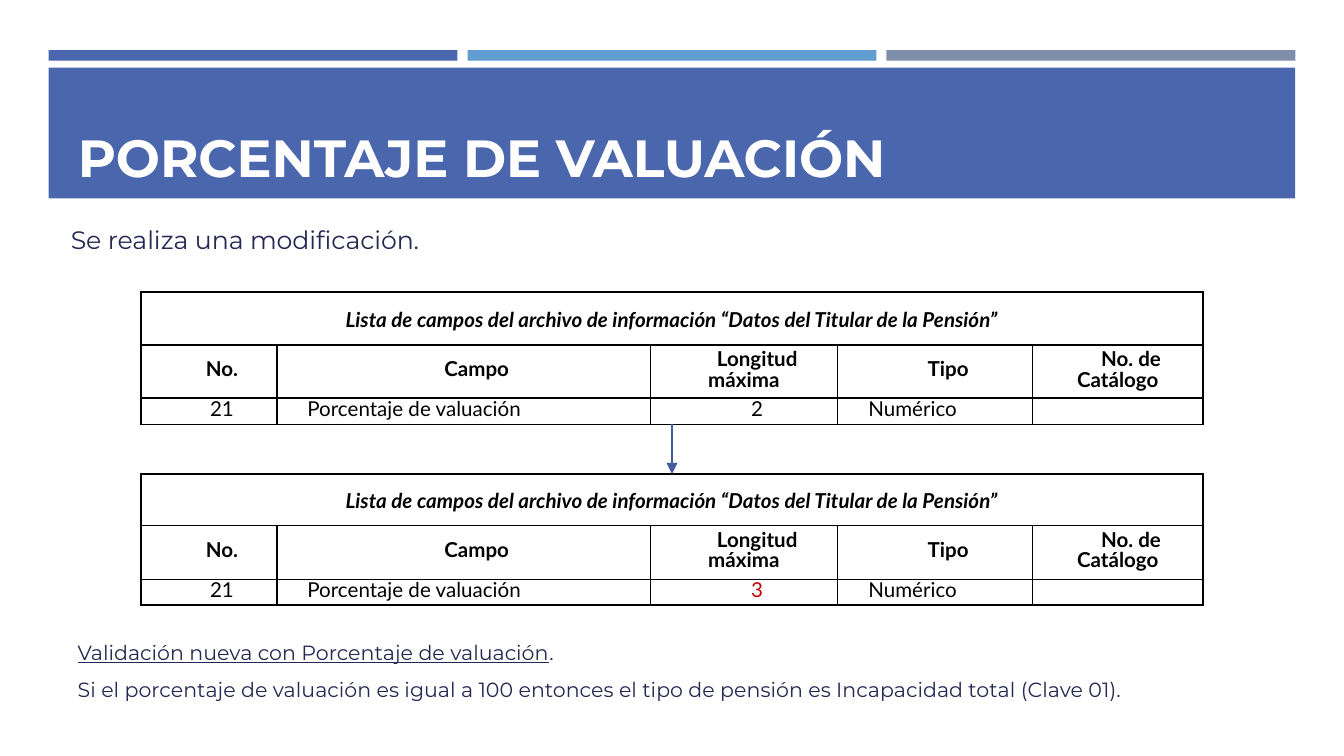
from dataclasses import dataclass

from lxml import etree
from pptx import Presentation
from pptx.dml.color import RGBColor
from pptx.enum.shapes import MSO_CONNECTOR, MSO_SHAPE
from pptx.enum.text import MSO_ANCHOR, MSO_AUTO_SIZE, PP_ALIGN
from pptx.oxml.ns import qn
from pptx.util import Cm, Pt

RECTANGLE = MSO_SHAPE.RECTANGLE
STRAIGHT = MSO_CONNECTOR.STRAIGHT
TOP, MIDDLE = MSO_ANCHOR.TOP, MSO_ANCHOR.MIDDLE
LEFT, CENTER, JUSTIFY = PP_ALIGN.LEFT, PP_ALIGN.CENTER, PP_ALIGN.JUSTIFY
NO_FIT = MSO_AUTO_SIZE.NONE
TITLE_ONLY = 5


@dataclass(frozen=True)
class Theme:
    band: str = "4A66AC"
    bars: tuple = ("4A66AC", "629DD1", "7F8FA9")
    arrow: str = "435C9B"
    heading: str = "FFFFFF"
    body: str = "242852"
    grid: str = "000000"
    changed: str = "C00000"
    body_font: str = "Montserrat"
    table_font: str = "Lato"
    title_size: float = 28
    lead_size: float = 13.5
    small_size: float = 11


THEME = Theme()
COLUMNS = (2.57, 7.06, 3.54, 3.68, 3.23)
CAPTION = "Lista de campos del archivo de información “Datos del Titular de la Pensión”"
HEADERS = ("No.", "Campo", "Longitud máxima", "Tipo", "No. de Catálogo")


def add_span(para, text, *, font, size, color, bold=False, italic=False, underline=False):
    span = para.add_run()
    span.text = text
    span.font.name = font
    span.font.size = Pt(size)
    span.font.color.rgb = RGBColor.from_string(color)
    span.font.bold = bold
    span.font.italic = italic
    span.font.underline = underline


def add_bar(page, box, color):
    bar = page.shapes.add_shape(RECTANGLE, *map(Cm, box))
    bar.shadow.inherit = False
    bar.fill.solid()
    bar.fill.fore_color.rgb = RGBColor.from_string(color)
    bar.line.fill.background()


def set_frame(frame):
    frame.word_wrap = True
    frame.auto_size = NO_FIT
    frame.vertical_anchor = TOP
    frame.margin_left = frame.margin_right = Cm(0.25)
    frame.margin_top = frame.margin_bottom = Cm(0.25)


def add_header(page, box, text):
    left, top, width, height = box
    gap, bar_height = 0.19, 0.2
    bar_width = (width - 2 * gap) / 3
    for index, color in enumerate(THEME.bars):
        add_bar(page, (left + index * (bar_width + gap), top, bar_width, bar_height), color)
    add_bar(page, (left, top + 0.33, width, height - 0.33), THEME.band)

    title = page.shapes.title
    page.shapes._spTree.append(title._element)
    title.left, title.top = Cm(left + 0.3), Cm(top + 1.17)
    title.width, title.height = Cm(width - 0.6), Cm(1.47)
    set_frame(title.text_frame)
    para = title.text_frame.paragraphs[0]
    para.alignment = LEFT
    para.line_spacing = 1.0
    para.space_before = Pt(0)
    add_span(para, text, font=THEME.body_font, size=THEME.title_size,
             color=THEME.heading, bold=True)


def add_body(page, box, lines, size):
    frame = page.shapes.add_textbox(*map(Cm, box)).text_frame
    set_frame(frame)
    for index, spans in enumerate(lines):
        para = frame.add_paragraph() if index else frame.paragraphs[0]
        para.alignment = JUSTIFY
        para.space_before = Pt(0.2 * size)
        para.space_after = Pt(4.5)
        for text, underline in spans:
            add_span(para, text, font=THEME.body_font, size=size,
                     color=THEME.body, underline=underline)


def set_borders(cell):
    properties = cell._tc.get_or_add_tcPr()
    for index, side in enumerate(("lnL", "lnR", "lnT", "lnB")):
        line = etree.Element(qn(f"a:{side}"), w=str(Pt(1)))
        fill = etree.SubElement(line, qn("a:solidFill"))
        etree.SubElement(fill, qn("a:srgbClr"), val=THEME.grid)
        properties.insert(index, line)


def fill_cell(cell, text, *, align=CENTER, color=THEME.grid, bold=False, italic=False,
              indent=0.5):
    cell.vertical_anchor = MIDDLE
    cell.margin_left = cell.margin_right = Cm(0.08)
    cell.margin_top = cell.margin_bottom = 0
    para = cell.text_frame.paragraphs[0]
    para.alignment = align
    para.line_spacing = Pt(10.8)
    para.space_before, para.space_after = Pt(0.6), Pt(0.4)
    para._p.get_or_add_pPr().set("indent", str(Cm(indent)))
    if text:
        add_span(para, text, font=THEME.table_font, size=THEME.small_size,
                 color=color, bold=bold, italic=italic)
    else:
        etree.SubElement(para._p, qn("a:endParaRPr"), sz=str(THEME.small_size * 100))


def add_field_table(page, left, top, row_heights, length, length_color):
    grid = page.shapes.add_table(
        len(row_heights), len(COLUMNS), Cm(left), Cm(top),
        Cm(sum(COLUMNS)), Cm(sum(row_heights))).table
    for column, width in zip(grid.columns, COLUMNS):
        column.width = Cm(width)
    for row, height in zip(grid.rows, row_heights):
        row.height = Cm(height)
    for cell in grid.iter_cells():
        cell.fill.background()
        set_borders(cell)

    caption = grid.cell(0, 0)
    caption.merge(grid.cell(0, len(COLUMNS) - 1))
    fill_cell(caption, CAPTION, bold=True, italic=True, indent=0)
    caption.margin_top = Cm(0.14)

    values = (("21", CENTER, THEME.grid),
              ("Porcentaje de valuación", JUSTIFY, THEME.grid),
              (length, CENTER, length_color),
              ("Numérico", JUSTIFY, THEME.grid),
              ("", CENTER, THEME.grid))
    for index, (header, (value, align, color)) in enumerate(zip(HEADERS, values)):
        fill_cell(grid.cell(1, index), header, bold=True)
        fill_cell(grid.cell(2, index), value, align=align, color=color)


def add_arrow(page, x, top, bottom):
    arrow = page.shapes.add_connector(STRAIGHT, Cm(x), Cm(top), Cm(x), Cm(bottom))
    arrow.line.color.rgb = RGBColor.from_string(THEME.arrow)
    arrow.line.width = Pt(1)
    etree.SubElement(arrow.line._get_or_add_ln(), qn("a:tailEnd"), type="triangle")
    etree.SubElement(arrow._element.spPr, qn("a:effectLst"))


def add_change_tables(page, left, top):
    before_rows, after_rows, gap = (1, 1, 0.5), (0.97, 1.02, 0.49), 0.94
    before_bottom = top + sum(before_rows)
    after_top = before_bottom + gap
    add_field_table(page, left, top, before_rows, "2", THEME.grid)
    add_field_table(page, left, after_top, after_rows, "3", THEME.changed)
    add_arrow(page, left + sum(COLUMNS) / 2, before_bottom, after_top)


def main():
    deck = Presentation()
    deck.slide_width, deck.slide_height = Cm(25.4), Cm(14.29)
    page = deck.slides.add_slide(deck.slide_layouts[TITLE_ONLY])
    add_header(page, (0.92, 0.95, 23.56, 2.8), "PORCENTAJE DE VALUACIÓN")
    add_body(page, (1.09, 3.99, 23.09, 1.12),
             [[("Se realiza una modificación.", False)]], THEME.lead_size)
    add_change_tables(page, 2.66, 5.52)
    add_body(page, (1.22, 11.85, 23.55, 2.11),
             [[("Validación nueva con Porcentaje de valuación", True), (".", False)],
              [("Si el porcentaje de valuación es igual a 100 entonces el tipo de "
                "pensión es Incapacidad total (Clave 01).", False)]],
             THEME.small_size)
    deck.save("out.pptx")


if __name__ == "__main__":
    main()
